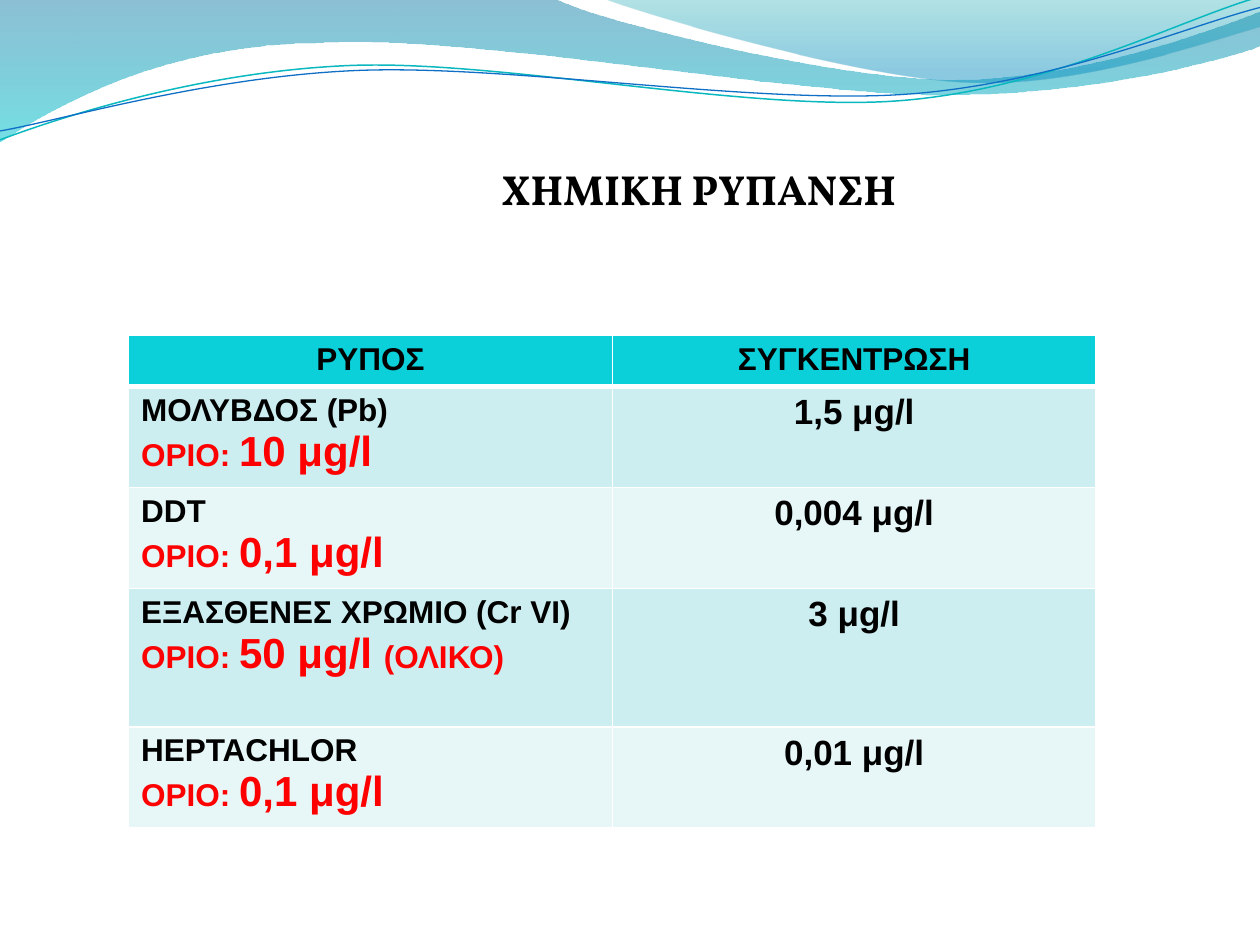
from dataclasses import dataclass
from math import cos, radians, sin

from lxml import etree
from pptx import Presentation
from pptx import util as u
from pptx.dml.color import RGBColor
from pptx.enum import text
from pptx.oxml.ns import qn


@dataclass(frozen=True)
class Theme:
    title_font: str = "Vollkorn"
    table_font: str = "Arial"
    ink: str = "000000"
    limit: str = "FF0000"
    header: str = "0BD0D9"
    border: str = "FFFFFF"
    bands: tuple = ("CCEEF1", "E7F7F8")
    label: int = 18
    value: int = 20
    large: int = 24


@dataclass(frozen=True)
class Box:
    """A region in slide grid units: 10 columns by 7.5 rows."""
    left: float
    top: float
    width: float
    height: float

    def emu(self):
        return [u.Inches(n) for n in (self.left, self.top, self.width, self.height)]

    def point(self, column, row):
        return u.Inches(self.left + column), u.Inches(self.top + row)


THEME = Theme()
SLIDE = Box(0, 0, 10, 7.5)
TITLE = Box(2.42, 1.25, 6.25, 0.51)
TABLE = Box(1.02, 2.66, 7.68, 3.91)
ROW_HEIGHTS = (0.41, 0.8, 0.8, 1.1, 0.8)
HEADER_BORDERS = {"a:lnL": 1, "a:lnR": 1, "a:lnT": 1, "a:lnB": 3}
STRAND_TILT = -2.7

# Each outline is a start point, then segments: one point is a straight side,
# three points are a cubic curve.
BANDS = [
    (((0, -0.01),
      [[(4.4, -0.01)],
       [(4.76, 0.17), (6.64, 0.63), (7.58, 0.63)],
       [(8.53, 0.63), (9.58, 0.26), (10, 0.09)],
       [(10.01, 0.36)],
       [(9.83, 0.44), (8.7, 0.76), (7.46, 0.75)],
       [(6.22, 0.75), (3.82, 0.28), (2.57, 0.34)],
       [(1.29, 0.35), (0.46, 0.83), (-0.01, 1.13)],
       [(0, -0.01)]]),
     [(0, "0074A1", 45), (1, "00C6CF", 55)]),
    (((4.79, -0.01),
      [[(5.09, 0.11), (6.82, 0.62), (7.69, 0.65)],
       [(8.56, 0.69), (9.61, 0.32), (10, 0.21)],
       [(10, 0)],
       [(4.79, -0.01)]]),
     [(0, "00A1A9", 30), (0.8, "008BBF", 45)]),
]
STRANDS = [
    (((0, 1.11),
      [[(0.48, 0.93), (1.58, 0.57), (2.77, 0.52)],
       [(3.95, 0.47), (5.93, 0.89), (7.13, 0.8)],
       [(8.33, 0.71), (9.38, 0.15), (9.98, -0.02)]]),
     (4.99, 0.58), "0AB8BF", 0.85),
    (((0, 1.04),
      [[(0.47, 0.96), (1.64, 0.61), (2.83, 0.56)],
       [(4.03, 0.51), (5.97, 0.83), (7.17, 0.75)],
       [(8.36, 0.67), (9.41, 0.21), (10, 0.06)]]),
     (5, 0.59), "0F6FC6", 0.75),
]

HEADINGS = ("ΡΥΠΟΣ", "ΣΥΓΚΕΝΤΡΩΣΗ")
POLLUTANTS = [
    ("ΜΟΛΥΒΔΟΣ (Pb)", "10 μg/l", "", "1,5 μg/l"),
    ("DDT", "0,1 μg/l", "", "0,004 μg/l"),
    ("ΕΞΑΣΘΕΝΕΣ ΧΡΩΜΙΟ (Cr VI)", "50 μg/l ", "(ΟΛΙΚΟ)", "3 μg/l"),
    ("HEPTACHLOR", "0,1 μg/l", "", "0,01 μg/l"),
]


def turn(point, centre, degrees):
    """Rotate a point clockwise around a centre."""
    angle = radians(degrees)
    x, y = (a - b for a, b in zip(point, centre))
    return (centre[0] + x * cos(angle) - y * sin(angle),
            centre[1] + x * sin(angle) + y * cos(angle))


def add_outline(page, box, outline, close):
    start, segments = outline
    vertices = [box.point(*point) for segment in segments for point in segment]
    builder = page.shapes.build_freeform(*box.point(*start))
    builder.add_line_segments(vertices, close=close)
    shape = builder.convert_to_shape()
    shape.shadow.inherit = False
    sides = iter(list(shape.element.spPr.iter(qn("a:lnTo"))))
    for segment in segments:
        group = [next(sides) for _ in segment]
        if len(group) == 3:
            curve = etree.Element(qn("a:cubicBezTo"))
            group[0].addprevious(curve)
            for side in group:
                curve.append(side[0])
                side.getparent().remove(side)
    return shape


def add_waves(page, box):
    for outline, stops in BANDS:
        shape = add_outline(page, box, outline, True)
        shape.line.fill.background()
        shape.fill.gradient()
        shape.fill.gradient_angle = 270
        for stop, (position, colour, _) in zip(shape.fill.gradient_stops, stops):
            stop.position = position
            stop.color.rgb = RGBColor.from_string(colour)
        colours = list(shape.element.spPr.iter(qn("a:srgbClr")))
        for element, (_, _, opacity) in zip(colours, stops):
            etree.SubElement(element, qn("a:alpha"), val=str(opacity * 1000))
    for (start, segments), centre, colour, width in STRANDS:
        level = (turn(start, centre, -STRAND_TILT),
                 [[turn(point, centre, -STRAND_TILT) for point in segment]
                  for segment in segments])
        shape = add_outline(page, box, level, False)
        shape.rotation = STRAND_TILT
        shape.fill.background()
        shape.line.color.rgb = RGBColor.from_string(colour)
        shape.line.width = u.Pt(width)


def add_span(para, words, size, colour=THEME.ink, font=THEME.table_font):
    span = para.add_run()
    span.text = words
    for name, value in {"name": font, "size": u.Pt(size), "bold": True}.items():
        setattr(span.font, name, value)
    span.font.color.rgb = RGBColor.from_string(colour)


def add_title(page, box, words):
    title = page.shapes.title
    for name, value in zip(("left", "top", "width", "height"), box.emu()):
        setattr(title, name, value)
    layout = {"word_wrap": True, "auto_size": text.MSO_AUTO_SIZE.SHAPE_TO_FIT_TEXT,
              "vertical_anchor": text.MSO_ANCHOR.TOP}
    for name, value in layout.items():
        setattr(title.text_frame, name, value)
    add_centred(title, words, THEME.large, THEME.title_font)


def add_centred(holder, words, size, font=THEME.table_font):
    para = holder.text_frame.paragraphs[0]
    para.alignment = text.PP_ALIGN.CENTER
    add_span(para, words, size, font=font)


def fill_cell(cell, colour):
    cell.fill.solid()
    cell.fill.fore_color.rgb = RGBColor.from_string(colour)


def add_borders(cell, widths):
    properties = cell._tc.get_or_add_tcPr()
    for index, (tag, width) in enumerate(widths.items()):
        line = etree.Element(qn(tag), w=str(u.Pt(width)))
        fill = etree.SubElement(line, qn("a:solidFill"))
        etree.SubElement(fill, qn("a:srgbClr"), val=THEME.border)
        properties.insert(index, line)


def add_pollutant_table(page, box):
    table = page.shapes.add_table(len(ROW_HEIGHTS), len(HEADINGS), *box.emu()).table
    for row, height in zip(table.rows, ROW_HEIGHTS):
        row.height = u.Inches(height)
    for cell, heading in zip(table.rows[0].cells, HEADINGS):
        fill_cell(cell, THEME.header)
        add_borders(cell, HEADER_BORDERS)
        add_centred(cell, heading, THEME.label)
    for index, (name, limit, remark, measured) in enumerate(POLLUTANTS):
        pollutant, level = table.rows[index + 1].cells
        for cell in (pollutant, level):
            fill_cell(cell, THEME.bands[index % 2])
        add_span(pollutant.text_frame.paragraphs[0], name, THEME.label)
        para = pollutant.text_frame.add_paragraph()
        add_span(para, "ΟΡΙΟ: ", THEME.label, THEME.limit)
        add_span(para, limit, THEME.large, THEME.limit)
        if remark:
            add_span(para, remark, THEME.label, THEME.limit)
        add_centred(level, measured, THEME.value)


def main():
    deck = Presentation()
    deck.slide_width, deck.slide_height = u.Inches(SLIDE.width), u.Inches(SLIDE.height)
    page = deck.slides.add_slide(deck.slide_layouts.get_by_name("Title Only"))
    add_waves(page, SLIDE)
    add_title(page, TITLE, "ΧΗΜΙΚΗ ΡΥΠΑΝΣΗ")
    add_pollutant_table(page, TABLE)
    deck.save("out.pptx")


if __name__ == "__main__":
    main()
